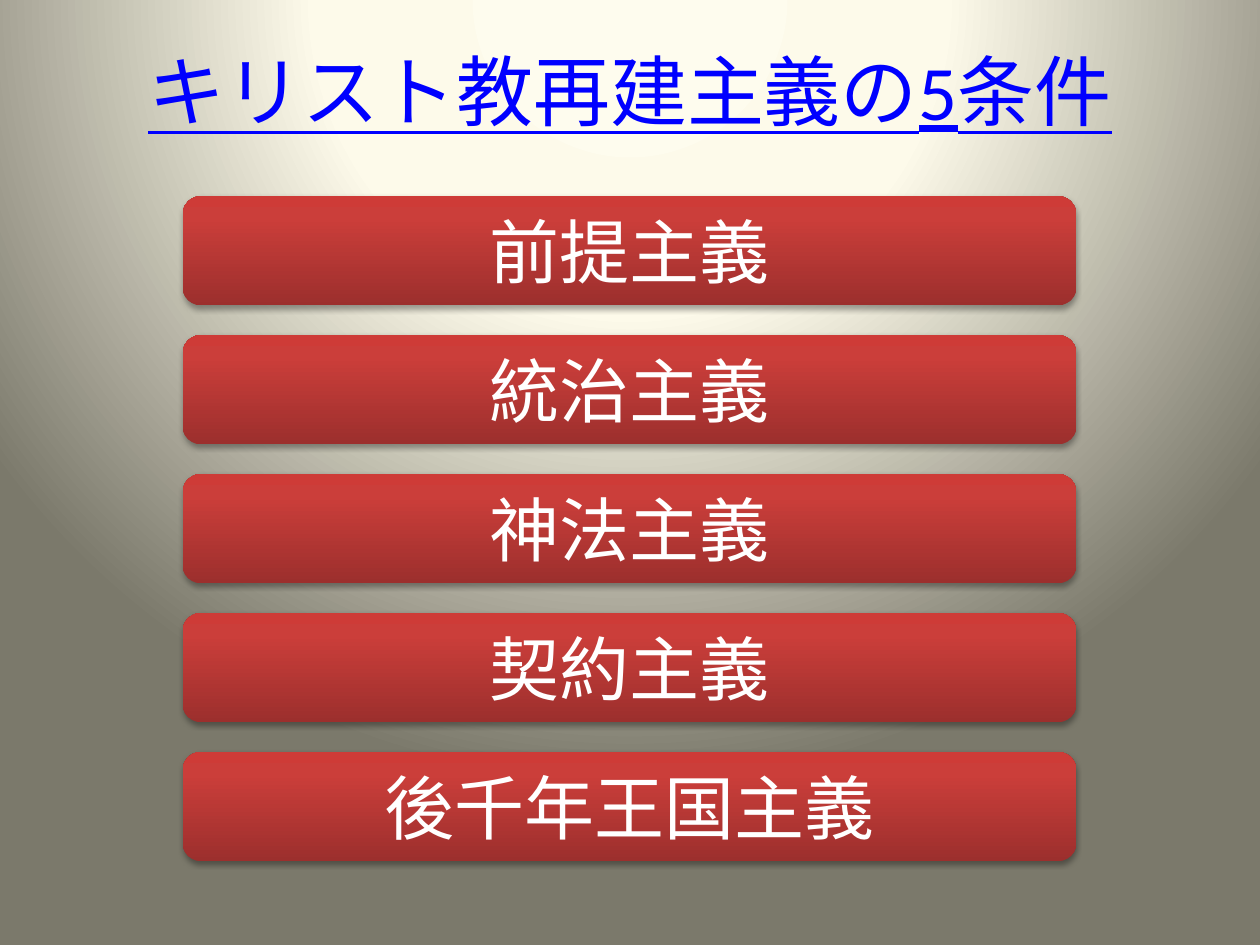
from pptx import Presentation
from pptx.dml.color import RGBColor
from pptx.enum.shapes import MSO_SHAPE
from pptx.enum.text import MSO_ANCHOR, PP_ALIGN
from pptx.oxml import parse_xml
from pptx.oxml.ns import nsdecls
from pptx.util import Pt

TITLE = "キリスト教再建主義の5条件"
CONDITIONS = ["前提主義", "統治主義", "神法主義", "契約主義", "後千年王国主義"]

BLUE = RGBColor(0x00, 0x00, 0xFF)
WHITE = RGBColor(0xFF, 0xFF, 0xFF)
BLACK = RGBColor(0x00, 0x00, 0x00)
PAGE_STOPS = [
    (0, RGBColor(0xFE, 0xFC, 0xEE)),
    (40, RGBColor(0xFD, 0xFA, 0xEA)),
    (100, RGBColor(0x7B, 0x79, 0x6B)),
]
BAR_STOPS = [
    (0, RGBColor(0x9C, 0x2F, 0x2D)),
    (80, RGBColor(0xCB, 0x3E, 0x3A)),
    (100, RGBColor(0xCE, 0x3B, 0x37)),
]
RADIAL = (
    '<a:path path="circle">'
    '<a:fillToRect l="50000" t="-80000" r="50000" b="180000"/></a:path>'
)
UPWARD = '<a:lin ang="16200000" scaled="0"/>'

FONT = "Calibri"
BAR_LEFT, BAR_TOP, BAR_WIDTH, BAR_HEIGHT = 104.4, 112.1, 510.7, 62.4
BAR_PITCH = 79.4


def gradient(stops, direction):
    marks = "".join(
        f'<a:gs pos="{position * 1000}"><a:srgbClr val="{colour}"/></a:gs>'
        for position, colour in stops
    )
    return parse_xml(
        f'<a:gradFill {nsdecls("a")} rotWithShape="1">'
        f"<a:gsLst>{marks}</a:gsLst>{direction}</a:gradFill>"
    )


def soft_shadow():
    return parse_xml(
        f'<a:effectLst {nsdecls("a")}>'
        f'<a:outerShdw blurRad="{Pt(3.15)}" dist="{Pt(1.8)}" dir="5400000" rotWithShape="0">'
        f'<a:srgbClr val="{BLACK}"><a:alpha val="35000"/></a:srgbClr>'
        "</a:outerShdw></a:effectLst>"
    )


def write(shape, text, size, colour):
    frame = shape.text_frame
    frame.text = text
    frame.word_wrap = True
    frame.vertical_anchor = MSO_ANCHOR.MIDDLE
    para = frame.paragraphs[0]
    para.alignment = PP_ALIGN.CENTER
    span = para.runs[0]
    span.font.name = FONT
    span.font.size = Pt(size)
    span.font.color.rgb = colour
    return span


def add_bar(page, text, top):
    bar = page.shapes.add_shape(
        MSO_SHAPE.ROUNDED_RECTANGLE, Pt(BAR_LEFT), Pt(top), Pt(BAR_WIDTH), Pt(BAR_HEIGHT)
    )
    properties = bar.element.spPr
    properties.append(gradient(BAR_STOPS, UPWARD))
    bar.line.fill.background()
    properties.append(soft_shadow())
    write(bar, text, 40, WHITE)


def main():
    deck = Presentation()
    deck.slide_width, deck.slide_height = Pt(720), Pt(540)
    page = deck.slides.add_slide(deck.slide_layouts[5])

    page.background.fill.solid()
    background = page.element.cSld.bg.bgPr
    background.replace(background[0], gradient(PAGE_STOPS, RADIAL))

    title = page.shapes.title
    title.left, title.top, title.width, title.height = Pt(36), Pt(6.5), Pt(648), Pt(90)
    write(title, TITLE, 44, BLUE).font.underline = True

    for index, condition in enumerate(CONDITIONS):
        add_bar(page, condition, BAR_TOP + index * BAR_PITCH)

    deck.save("out.pptx")


if __name__ == "__main__":
    main()
